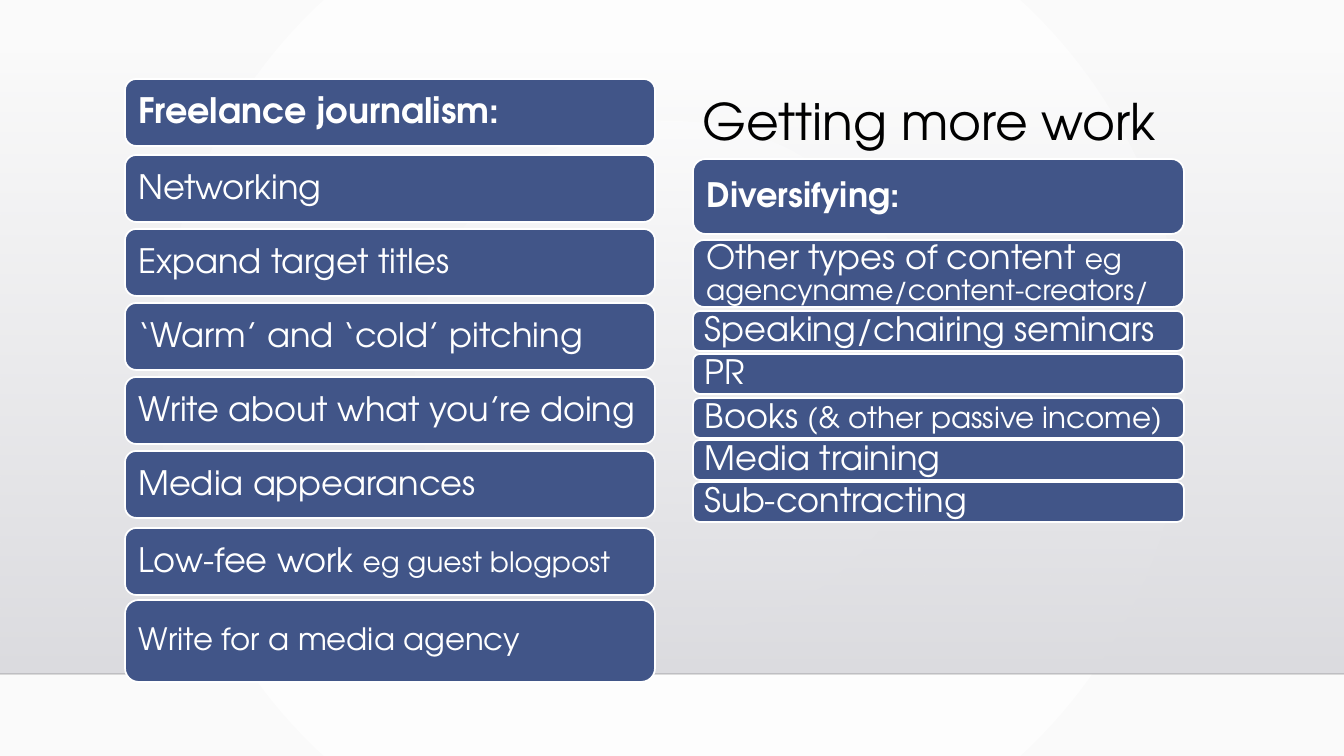
"""Build the "Getting more work" slide with two columns of rounded bars."""
import pptx
import pptx.util
import pptx.dml.color
import pptx.enum.shapes
import pptx.enum.text
import pptx.oxml
import pptx.oxml.ns

TITLE = "Getting more work"
COLUMNS = [
    {"left": 125, "width": 530, "bars": [
        (79, 67, [("Freelance journalism:", 25, True)]),
        (155, 67, [("Networking", 24, False)]),
        (229, 67, [("Expand target titles", 24, False)]),
        (303, 67, [("‘Warm’ and ‘cold’ pitching", 24, False)]),
        (377, 67, [("Write about what you’re doing", 24, False)]),
        (451, 67, [("Media appearances", 24, False)]),
        (528, 67, [("Low-fee work ", 24, False), ("eg guest blogpost", 20, False)]),
        (600, 82, [("Write for a media agency", 22, False)]),
    ]},
    {"left": 693, "width": 491, "bars": [
        (159, 75, [("Diversifying:", 24, True)]),
        (240, 67, [("Other types of content ", 24, False),
                   ("eg agencyname/content-creators/", 20, False)]),
        (311, 40, [("Speaking/chairing seminars", 24, False)]),
        (354, 40, [("PR", 24, False)]),
        (398, 40, [("Books ", 24, False), ("(& other passive income)", 21, False)]),
        (440, 40, [("Media training", 24, False)]),
        (482, 40, [("Sub-contracting", 24, False)]),
    ]},
]

PX = 914400 / 100.8
SLIDE_W, SLIDE_H = 1344, 756
PANEL_TOP, FLOOR = 51, 674
INSET = 10
FONT = "TeX Gyre Adventor"
BLUE = pptx.dml.color.RGBColor(0x41, 0x55, 0x88)
WHITE = pptx.dml.color.RGBColor(0xFF, 0xFF, 0xFF)
BLACK = pptx.dml.color.RGBColor(0x00, 0x00, 0x00)
NEAR_WHITE = pptx.dml.color.RGBColor(0xFA, 0xFA, 0xFA)
PANEL_LIGHT = pptx.dml.color.RGBColor(0xDC, 0xDC, 0xE0)
PANEL_DARK = pptx.dml.color.RGBColor(0xDE, 0xDE, 0xE2)


def px(n):
    return pptx.util.Emu(round(n * PX))


def set_alpha(color_element, percent):
    alpha = pptx.oxml.parse_xml(
        f'<a:alpha {pptx.oxml.ns.nsdecls("a")} val="{percent * 1000}"/>')
    color_element.append(alpha)


def set_stops(fill, colors):
    for position, (stop, color) in enumerate(zip(fill.gradient_stops, colors)):
        stop.color.rgb = color
        stop.position = position


def add_background(slide):
    fill = slide.background.fill
    fill.gradient()
    set_stops(fill, (WHITE, NEAR_WHITE))
    lin = slide._element.find(".//" + pptx.oxml.ns.qn("a:lin"))
    lin.getparent().replace(lin, pptx.oxml.parse_xml(
        f'<a:path {pptx.oxml.ns.nsdecls("a")} path="circle">'
        '<a:fillToRect l="50000" t="50000" r="50000" b="50000"/></a:path>'))


def add_panel(slide):
    sp = slide.shapes.add_shape(pptx.enum.shapes.MSO_SHAPE.RECTANGLE,
                                0, px(PANEL_TOP), px(SLIDE_W), px(FLOOR - PANEL_TOP))
    sp.shadow.inherit = False
    sp.line.fill.background()
    sp.fill.gradient()
    sp.fill.gradient_angle = 270
    set_stops(sp.fill, (PANEL_LIGHT, PANEL_DARK))
    set_alpha(sp._element.find(".//" + pptx.oxml.ns.qn("a:srgbClr")), 0)

    line = slide.shapes.add_connector(pptx.enum.shapes.MSO_CONNECTOR.STRAIGHT,
                                      0, px(FLOOR), px(SLIDE_W), px(FLOOR))
    line.line.color.rgb = BLACK
    line.line.width = pptx.util.Pt(1)
    sp_pr = line._element.spPr
    set_alpha(sp_pr.find(".//" + pptx.oxml.ns.qn("a:srgbClr")), 20)
    sp_pr.append(pptx.oxml.parse_xml(f'<a:effectLst {pptx.oxml.ns.nsdecls("a")}/>'))


def write(tf, runs, color):
    tf.word_wrap = True
    p = tf.paragraphs[0]
    p.alignment = pptx.enum.text.PP_ALIGN.LEFT
    p.line_spacing = 0.9
    for text, size, bold in runs:
        r = p.add_run()
        r.text = text
        r.font.name = FONT
        r.font.size = pptx.util.Pt(size)
        r.font.bold = bold
        r.font.color.rgb = color


def add_bar(slide, left, top, width, height, runs):
    sp = slide.shapes.add_shape(pptx.enum.shapes.MSO_SHAPE.ROUNDED_RECTANGLE,
                                px(left), px(top), px(width), px(height))
    sp.shadow.inherit = False
    sp.fill.solid()
    sp.fill.fore_color.rgb = BLUE
    sp.line.color.rgb = WHITE
    sp.line.width = pptx.util.Pt(1.25)
    tf = sp.text_frame
    tf.vertical_anchor = pptx.enum.text.MSO_ANCHOR.MIDDLE
    tf.margin_left = tf.margin_right = tf.margin_top = tf.margin_bottom = px(INSET)
    write(tf, runs, WHITE)


def main():
    prs = pptx.Presentation()
    prs.slide_width, prs.slide_height = px(SLIDE_W), px(SLIDE_H)
    slide = prs.slides.add_slide(prs.slide_layouts[6])
    add_background(slide)
    add_panel(slide)
    title = slide.shapes.add_textbox(px(693), px(92), px(483), px(67))
    write(title.text_frame, [(TITLE, 36, False)], BLACK)
    for column in COLUMNS:
        for top, height, runs in column["bars"]:
            add_bar(slide, column["left"], top, column["width"], height, runs)
    prs.save("out.pptx")


if __name__ == "__main__":
    main()
